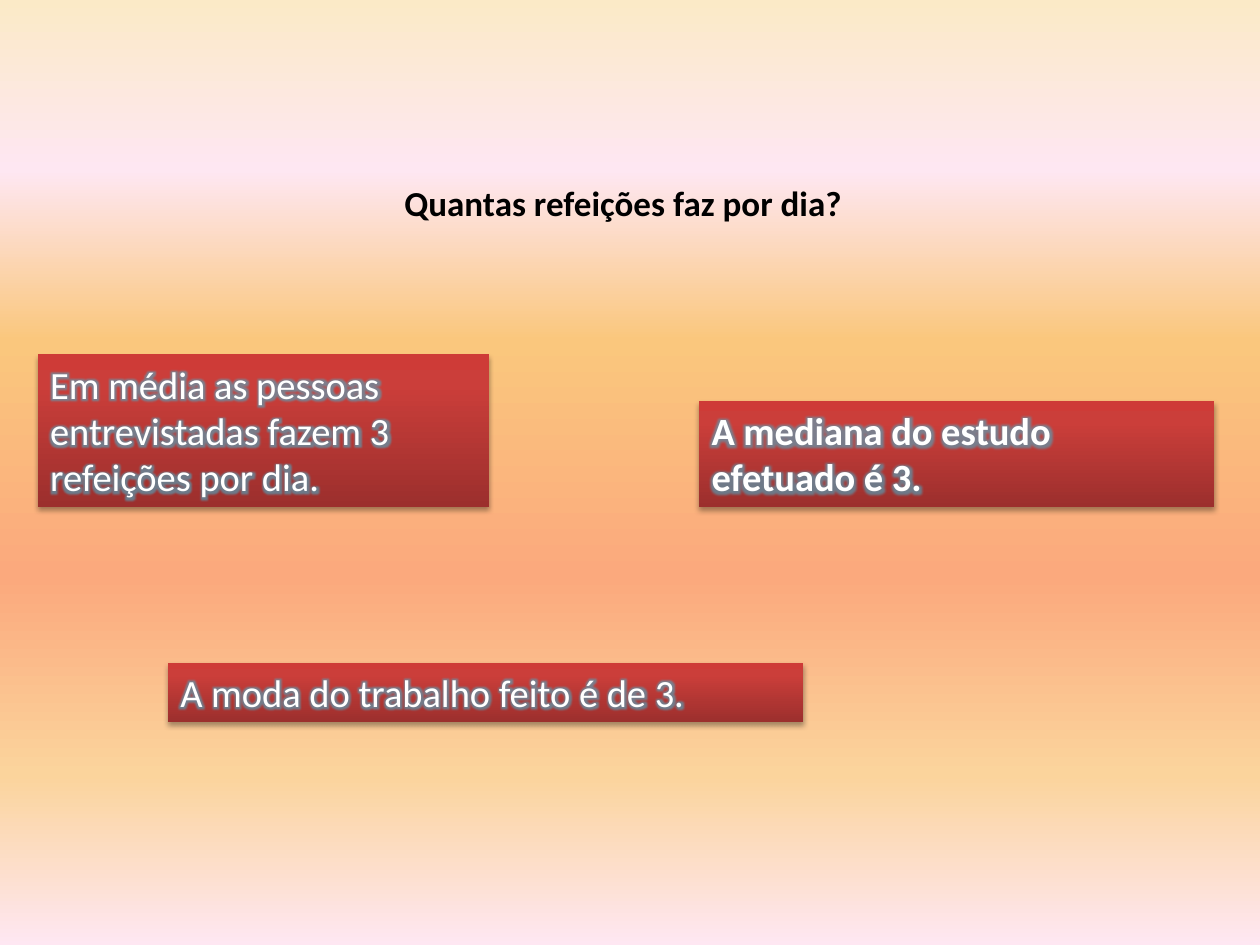
import pptx
import pptx.dml.color
import pptx.enum.shapes
import pptx.enum.text
import pptx.oxml
import pptx.oxml.ns
import pptx.util

Pt = pptx.util.Pt
FONT = "Calibri"
COLORS = {
    "question": "000000",
    "answer": "FFFFFF",
    "shadow": "000000",
    "glow": "4BACC6",
    "cream": "FBEAC7",
    "pink": "FEE7F2",
    "amber": "FAC77D",
    "salmon": "FBA97D",
    "sand": "FBD49C",
    "dark_red": "9C2F2D",
    "red": "CB3E3A",
    "bright_red": "CE3B37",
}
# Gradient stops: percent and colour name
SUNSET = [(0, "cream"), (18, "pink"), (36, "amber"),
          (61, "salmon"), (82, "sand"), (100, "pink")]
BRICK = [(0, "dark_red"), (80, "red"), (100, "bright_red")]


def drawing_xml(tag, content):
    namespace = pptx.oxml.ns.nsdecls("a")
    return pptx.oxml.parse_xml(f"<a:{tag} {namespace}>{content}</a:{tag}>")


def color_xml(name, opacity=100):
    return (f'<a:srgbClr val="{COLORS[name]}">'
            f'<a:alpha val="{opacity * 1000}"/></a:srgbClr>')


def set_gradient(fill, properties, stops, angle):
    fill.background()
    stops_xml = "".join(f'<a:gs pos="{percent * 1000}">{color_xml(name)}</a:gs>'
                        for percent, name in stops)
    gradient = drawing_xml("gradFill", f"<a:gsLst>{stops_xml}</a:gsLst>"
                                       f'<a:lin ang="{angle * 60000}" scaled="0"/>')
    properties.replace(properties.find(pptx.oxml.ns.qn("a:noFill")), gradient)


def add_shadow(box):
    box.shadow.inherit = False
    effects = box.element.spPr.find(pptx.oxml.ns.qn("a:effectLst"))
    shadow = drawing_xml("outerShdw", color_xml("shadow", 35))
    for key, value in (("blurRad", Pt(3.1)), ("dist", Pt(1.8)), ("dir", 90 * 60000)):
        shadow.set(key, str(int(value)))
    shadow.set("rotWithShape", "0")
    effects.append(shadow)


def write_text(box, text, size, color, bold):
    frame = box.text_frame
    frame.text = text
    frame.word_wrap = True
    frame.auto_size = pptx.enum.text.MSO_AUTO_SIZE.SHAPE_TO_FIT_TEXT
    frame.vertical_anchor = pptx.enum.text.MSO_ANCHOR.TOP
    paragraph = frame.paragraphs[0]
    paragraph.alignment = pptx.enum.text.PP_ALIGN.LEFT
    font = paragraph.runs[0].font
    font.name, font.size, font.bold = FONT, Pt(size), bold
    font.color.rgb = pptx.dml.color.RGBColor.from_string(COLORS[color])
    return paragraph.runs[0]


def add_glow(run):
    glow = f'<a:glow rad="{Pt(8)}">{color_xml("glow", 60)}</a:glow>'
    text_fill = run.font.fill
    text_fill.solid()
    run_properties = run._r.get_or_add_rPr()
    solid = run_properties.find(pptx.oxml.ns.qn("a:solidFill"))
    solid.addnext(drawing_xml("effectLst", glow))


def add_question(slide, text, left, top, width, height):
    question = slide.shapes.add_textbox(Pt(left), Pt(top), Pt(width), Pt(height))
    write_text(question, text, 20, "question", True)


def add_answer(slide, text, bold, left, top, width, height):
    answer = slide.shapes.add_shape(pptx.enum.shapes.MSO_SHAPE.RECTANGLE,
                                    Pt(left), Pt(top), Pt(width), Pt(height))
    set_gradient(answer.fill, answer.element.spPr, BRICK, 270)
    answer.line.fill.background()
    add_shadow(answer)
    add_glow(write_text(answer, text, 22, "answer", bold))


def main():
    presentation = pptx.Presentation()
    presentation.slide_width, presentation.slide_height = Pt(720), Pt(540)
    slide = presentation.slides.add_slide(presentation.slide_layouts[6])

    # Background
    background_fill = slide.background.fill
    background_fill.background()
    set_gradient(background_fill, slide.element.find(".//" + pptx.oxml.ns.qn("p:bgPr")),
                 SUNSET, 90)

    # Survey question
    add_question(slide, "Quantas refeições faz por dia?", 224, 100, 272, 31.5)

    # Mean, median and mode
    add_answer(slide, "Em média as pessoas entrevistadas fazem 3 refeições por dia.",
               False, 21.6, 202.5, 258, 87)
    add_answer(slide, "A mediana do estudo efetuado é 3.", True, 399.5, 229, 294.5, 60.5)
    add_answer(slide, "A moda do trabalho feito é de 3.", False, 96, 378.7, 363, 34)

    presentation.save("out.pptx")


if __name__ == "__main__":
    main()
